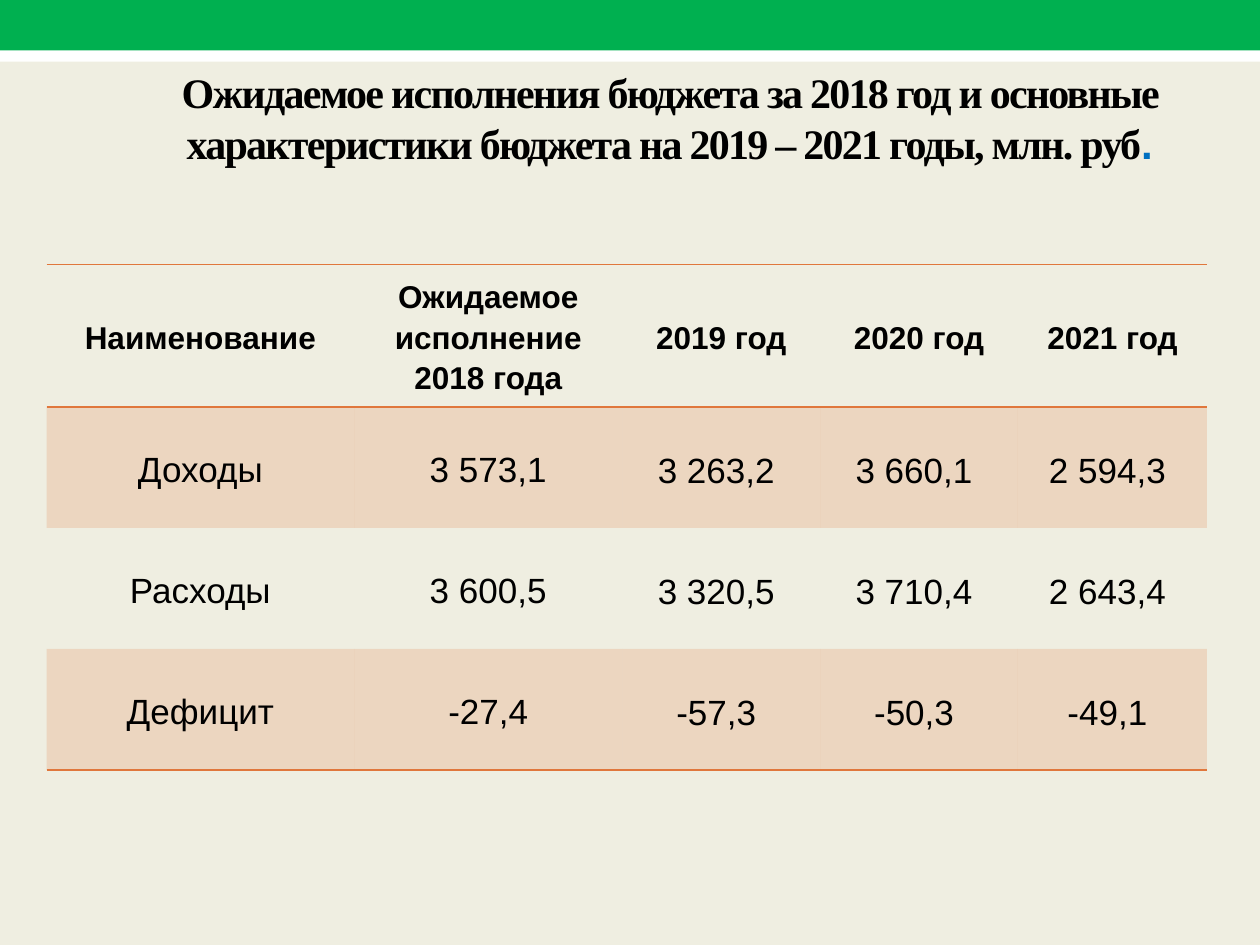
from lxml import etree
from pptx import Presentation
from pptx.dml.color import RGBColor
from pptx.enum.shapes import MSO_SHAPE
from pptx.enum.text import MSO_ANCHOR, PP_ALIGN
from pptx.oxml import parse_xml
from pptx.oxml.ns import nsdecls, qn
from pptx.util import Inches, Pt

CREAM = RGBColor(0xEF, 0xEE, 0xE1)
WHITE = RGBColor(0xFF, 0xFF, 0xFF)
GREEN = RGBColor(0x00, 0xB0, 0x50)
BLACK = RGBColor(0x00, 0x00, 0x00)
BLUE = RGBColor(0x00, 0x70, 0xC0)
ORANGE = RGBColor(0xE0, 0x77, 0x3C)
NO_STYLE = "{2D5ABB26-0587-4C30-8999-92F81FD0307C}"

TITLE = ("Ожидаемое исполнения бюджета за 2018 год и основные "
         "характеристики бюджета на 2019 – 2021 годы, млн. руб")
ROWS = [
    ["Наименование", "Ожидаемое исполнение 2018 года", "2019 год", "2020 год", "2021 год"],
    ["Доходы", "3 573,1", "3 263,2", "3 660,1", "2 594,3"],
    ["Расходы", "3 600,5", "3 320,5", "3 710,4", "2 643,4"],
    ["Дефицит", "-27,4", "-57,3", "-50,3", "-49,1"],
]
COL_WIDTHS = [2.44, 2.13, 1.57, 1.57, 1.5]
ROW_HEIGHTS = [1.13, 0.96, 0.96, 0.96]


def add_band(slide, left, top, width, height, color):
    """Draw a plain filled band."""
    sp = slide.shapes.add_shape(MSO_SHAPE.RECTANGLE, Inches(left), Inches(top),
                                Inches(width), Inches(height))
    sp.shadow.inherit = False
    sp.fill.solid()
    sp.fill.fore_color.rgb = color
    sp.line.fill.background()


def add_title(slide, left, top, width, height):
    """Place the title and its blue full stop."""
    sp = slide.shapes.title
    sp.left, sp.top, sp.width, sp.height = map(Inches, (left, top, width, height))
    tf = sp.text_frame
    tf.word_wrap = True
    tf.vertical_anchor = MSO_ANCHOR.TOP
    p = tf.paragraphs[0]
    p.alignment = PP_ALIGN.CENTER
    p.font.size, p.font.bold = Pt(24), True
    for text, name, color, spacing in [(TITLE, "Times New Roman", BLACK, "-100"),
                                       (".", "Arial", BLUE, "0")]:
        r = p.add_run()
        r.text = text
        r.font.name, r.font.size, r.font.bold = name, Pt(24), True
        r.font.color.rgb = color
        r.font._element.set("spc", spacing)


def add_border(cell, side):
    """Rule the top (T) or bottom (B) edge of a cell."""
    cell._tc.get_or_add_tcPr().insert(0, parse_xml(
        f'<a:ln{side} {nsdecls("a")} w="12700"><a:solidFill>'
        f'<a:srgbClr val="{ORANGE}"/></a:solidFill></a:ln{side}>'))


def fill_cell(cell, shaded):
    """Tint a cell in translucent orange or leave it clear."""
    if not shaded:
        cell.fill.background()
        return
    cell.fill.solid()
    cell.fill.fore_color.rgb = ORANGE
    color = cell._tc.tcPr.find(".//" + qn("a:srgbClr"))
    etree.SubElement(color, qn("a:alpha")).set("val", "20000")


def add_budget_table(slide, left, top):
    """Build the budget table with its top left corner at the given point."""
    frame = slide.shapes.add_table(len(ROWS), len(COL_WIDTHS), Inches(left), Inches(top),
                                   Inches(sum(COL_WIDTHS)), Inches(sum(ROW_HEIGHTS)))
    table = frame.table
    table.first_row = table.horz_banding = False
    table._tbl.tblPr.find(qn("a:tableStyleId")).text = NO_STYLE
    for column, width in zip(table.columns, COL_WIDTHS):
        column.width = Inches(width)
    for i, (row, height, texts) in enumerate(zip(table.rows, ROW_HEIGHTS, ROWS)):
        row.height = Inches(height)
        header = i == 0
        for j, (cell, text) in enumerate(zip(row.cells, texts)):
            cell.text = text
            cell.vertical_anchor = MSO_ANCHOR.MIDDLE
            if not header and j >= 2:
                cell.margin_left = cell.margin_top = Inches(0.01)
                cell.margin_right, cell.margin_bottom = Inches(0.09), 0
            p = cell.text_frame.paragraphs[0]
            p.alignment, p.line_spacing = PP_ALIGN.CENTER, 1.15
            p.font.name, p.font.bold = "Arial", header
            p.font.size = Pt(18 if header else 20)
            p.font.color.rgb = BLACK
            fill_cell(cell, i % 2 == 1)
            if header or i == len(ROWS) - 1:
                add_border(cell, "B")
            if header:
                add_border(cell, "T")


def main():
    """Build and save the slide."""
    prs = Presentation()
    prs.slide_width, prs.slide_height = Inches(10), Inches(7.5)
    slide = prs.slides.add_slide(prs.slide_layouts[5])
    slide.background.fill.solid()
    slide.background.fill.fore_color.rgb = CREAM
    add_band(slide, 0, 0.24, 10, 0.25, WHITE)
    add_band(slide, 0, 0, 10, 0.4, GREEN)
    add_title(slide, 1.14, 0.48, 8.35, 0.91)
    add_budget_table(slide, 0.37, 2.1)
    prs.save("out.pptx")


if __name__ == "__main__":
    main()
